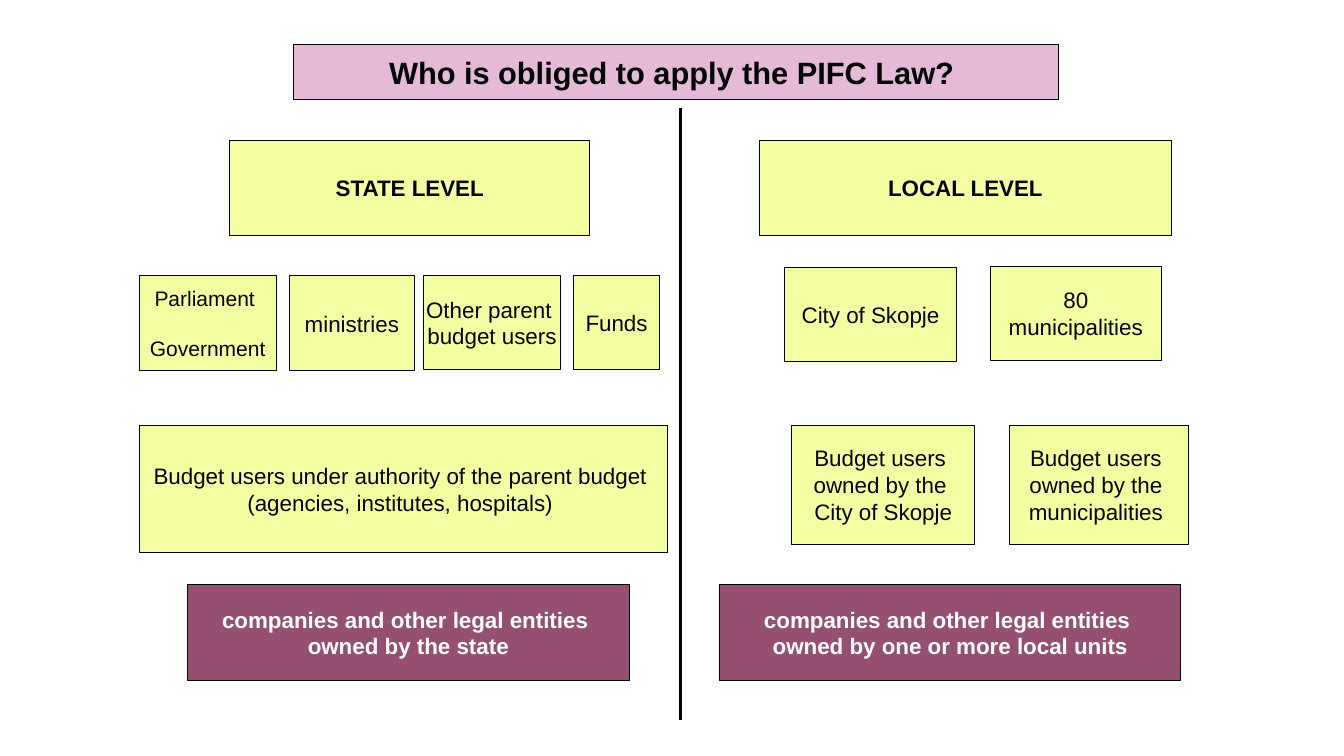
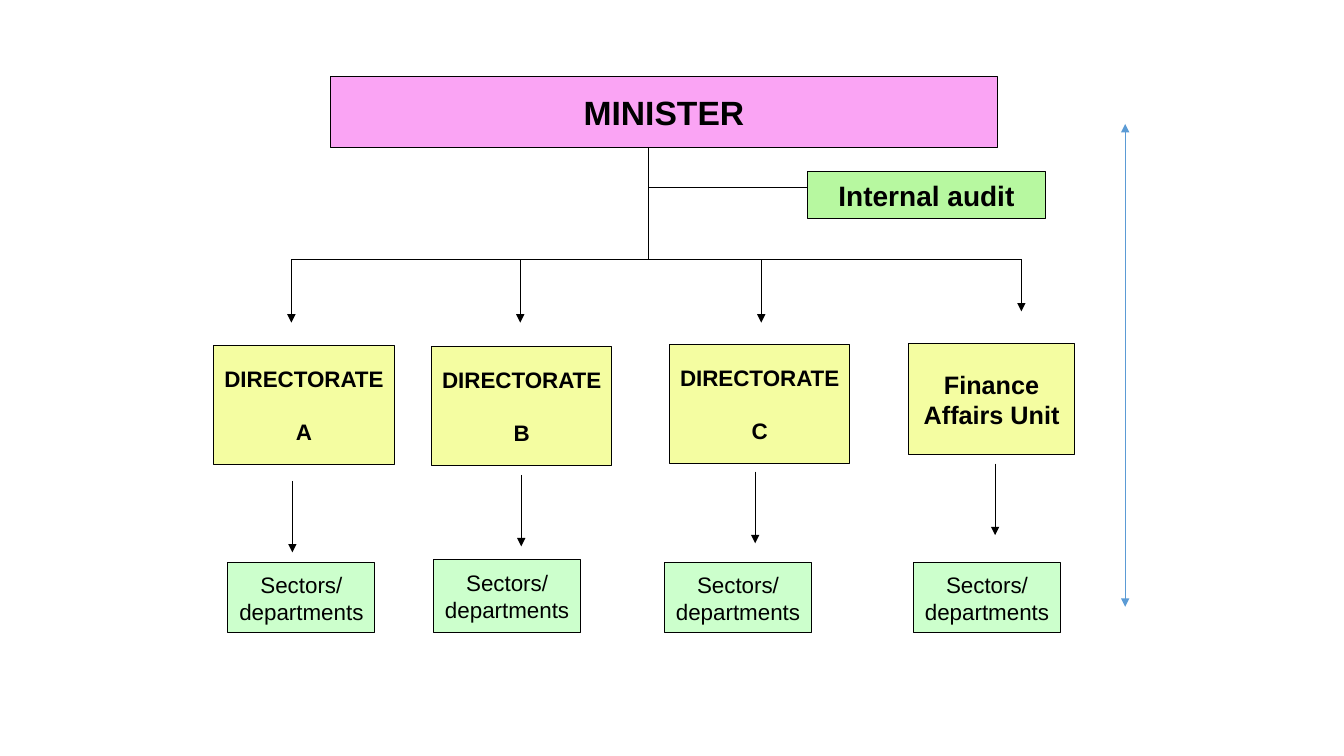
from dataclasses import dataclass

from lxml.etree import SubElement
from pptx import Presentation
from pptx.dml.color import RGBColor
from pptx.enum.shapes import MSO_CONNECTOR, MSO_SHAPE
from pptx.enum.text import MSO_ANCHOR, PP_ALIGN
from pptx.oxml.ns import qn
from pptx.slide import Slide
from pptx.util import Inches, Pt

COLOURS = {
    "ink": "020506",
    "black": "000000",
    "white": "FFFFFF",
    "title": "E5B9D8",
    "yellow": "F4FDA1",
    "plum": "954F72",
    "pink": "FAA4F4",
    "green": "B7F8A0",
    "mint": "CCFFCC",
    "blue": "5B9BD5",
}
FRAME_FORMAT = {"word_wrap": False, "vertical_anchor": MSO_ANCHOR.MIDDLE}
LINE_WIDTH = 0.75
BLANK_LAYOUT = 6


@dataclass(frozen=True)
class Box:
    lines: tuple[str, ...]
    left: float
    top: float
    width: float
    height: float
    fill: str = "yellow"
    size: int = 16
    bold: bool = False
    colour: str = "ink"
    gap: float = 0


@dataclass(frozen=True)
class Line:
    start: tuple[float, float]
    end: tuple[float, float]
    colour: str = "black"
    width: float = LINE_WIDTH
    arrows: tuple[str, ...] = ()


@dataclass(frozen=True)
class Branch:
    head: Box
    drop_left: float
    drop_end: float
    link_left: float
    link_top: float
    sector_left: float
    sector_top: float = 5.58


def rgb(name: str) -> RGBColor:
    return RGBColor.from_string(COLOURS[name])


def draw_box(page: Slide, box: Box) -> None:
    shape = page.shapes.add_shape(
        MSO_SHAPE.RECTANGLE,
        Inches(box.left), Inches(box.top), Inches(box.width), Inches(box.height),
    )
    shape.shadow.inherit = False
    shape.fill.solid()
    shape.fill.fore_color.rgb = rgb(box.fill)
    shape.line.color.rgb = rgb("black")
    shape.line.width = Pt(LINE_WIDTH)
    frame = shape.text_frame
    for name, value in FRAME_FORMAT.items():
        setattr(frame, name, value)
    font_format = {"name": "Arial", "size": Pt(box.size), "bold": box.bold}
    for index, text in enumerate(box.lines):
        para = frame.add_paragraph() if index else frame.paragraphs[0]
        para.alignment = PP_ALIGN.CENTER
        if index and box.gap:
            para.space_before = Pt(box.gap)
        span = para.add_run()
        span.text = text
        for name, value in font_format.items():
            setattr(span.font, name, value)
        span.font.color.rgb = rgb(box.colour)


def draw_line(page: Slide, line: Line) -> None:
    connector = page.shapes.add_connector(
        MSO_CONNECTOR.STRAIGHT, *(Inches(value) for value in line.start + line.end)
    )
    connector.line.color.rgb = rgb(line.colour)
    connector.line.width = Pt(line.width)
    outline = connector.line._get_or_add_ln()
    for arrow in line.arrows:
        SubElement(outline, qn(f"a:{arrow}"), type="triangle")
    SubElement(connector._element.spPr, qn("a:effectLst"))


def draw_arrow(page: Slide, left: float, top: float, bottom: float) -> None:
    draw_line(page, Line((left, top), (left, bottom), arrows=("tailEnd",)))


def directorate(letter: str, left: float, top: float) -> Box:
    return Box(("DIRECTORATE", letter), left, top, 1.79, 1.18,
               bold=True, colour="black", gap=18.5)


def build_law_page(page: Slide) -> None:
    companies = "companies and other legal entities "
    boxes = [
        Box(("Who is obliged to apply the PIFC Law? ",), 2.91, 0.44, 7.59, 0.55,
            "title", 22, True),
        Box(("STATE LEVEL",), 2.28, 1.39, 3.57, 0.95, bold=True),
        Box(("LOCAL LEVEL",), 7.53, 1.39, 4.09, 0.95, bold=True),
        Box(("Parliament ", "Government"), 1.38, 2.73, 1.36, 0.95, size=15, gap=17.5),
        Box(("ministries",), 2.87, 2.73, 1.24, 0.95),
        Box(("Other parent ", "budget users"), 4.2, 2.73, 1.36, 0.94),
        Box(("Funds",), 5.69, 2.73, 0.85, 0.94),
        Box(("City of Skopje",), 7.78, 2.65, 1.71, 0.94),
        Box(("80", "municipalities"), 9.82, 2.64, 1.7, 0.94),
        Box(("Budget users under authority of the parent budget ",
             "(agencies, institutes, hospitals) "), 1.38, 4.22, 5.24, 1.26),
        Box(("Budget users ", "owned by the ", "City of Skopje"),
            7.85, 4.22, 1.82, 1.18),
        Box(("Budget users ", "owned by the ", "municipalities "),
            10.01, 4.22, 1.78, 1.18),
        Box((companies, "owned by the state"), 1.86, 5.8, 4.38, 0.95,
            "plum", bold=True, colour="white"),
        Box((companies, "owned by one or more local units"), 7.14, 5.8, 4.57, 0.95,
            "plum", bold=True, colour="white"),
    ]
    for box in boxes:
        draw_box(page, box)
    draw_line(page, Line((6.75, 1.07), (6.75, 7.14), width=2.25))


def build_ministry_page(page: Slide) -> None:
    trunk, rail, audit_level, link_length = 6.43, 2.57, 1.86, 0.71
    sector_bottom = 6.28
    finance = Box(("Finance", "Affairs Unit"), 9.01, 3.41, 1.65, 1.1,
                  size=18, bold=True, colour="black")
    branches = [
        Branch(directorate("A", 2.12, 3.43), 2.89, 3.2, 2.9, 4.77, 2.26),
        Branch(directorate("B", 4.28, 3.44), 5.16, 3.2, 5.17, 4.71, 4.3, 5.55),
        Branch(directorate("C", 6.64, 3.42), 7.55, 3.2, 7.49, 4.68, 6.59),
        Branch(finance, 10.13, 3.09, 9.87, 4.6, 9.06),
    ]
    draw_box(page, Box(("MINISTER",), 3.28, 0.76, 6.61, 0.7, "pink", 24, True, "black"))
    draw_box(page, Box(("Internal audit",), 8.01, 1.7, 2.36, 0.47,
                       "green", 20, True, "black"))
    lines = [
        Line((trunk, 1.47), (trunk, rail)),
        Line((8.01, audit_level), (trunk, audit_level)),
        Line((branches[0].drop_left, rail), (branches[-1].drop_left, rail)),
        Line((11.16, 1.23), (11.16, 6.02), "blue", 1, ("headEnd", "tailEnd")),
    ]
    for line in lines:
        draw_line(page, line)
    for branch in branches:
        draw_box(page, branch.head)
        draw_arrow(page, branch.drop_left, rail, branch.drop_end)
        draw_arrow(page, branch.link_left, branch.link_top,
                   branch.link_top + link_length)
        draw_box(page, Box(("Sectors/", "departments"), branch.sector_left,
                           branch.sector_top, 1.46, sector_bottom - branch.sector_top,
                           "mint", colour="black"))


def main() -> None:
    deck = Presentation()
    deck.slide_width = Inches(13.33)
    deck.slide_height = Inches(7.5)
    for build in (build_law_page, build_ministry_page):
        build(deck.slides.add_slide(deck.slide_layouts[BLANK_LAYOUT]))
    deck.save("out.pptx")


if __name__ == "__main__":
    main()
